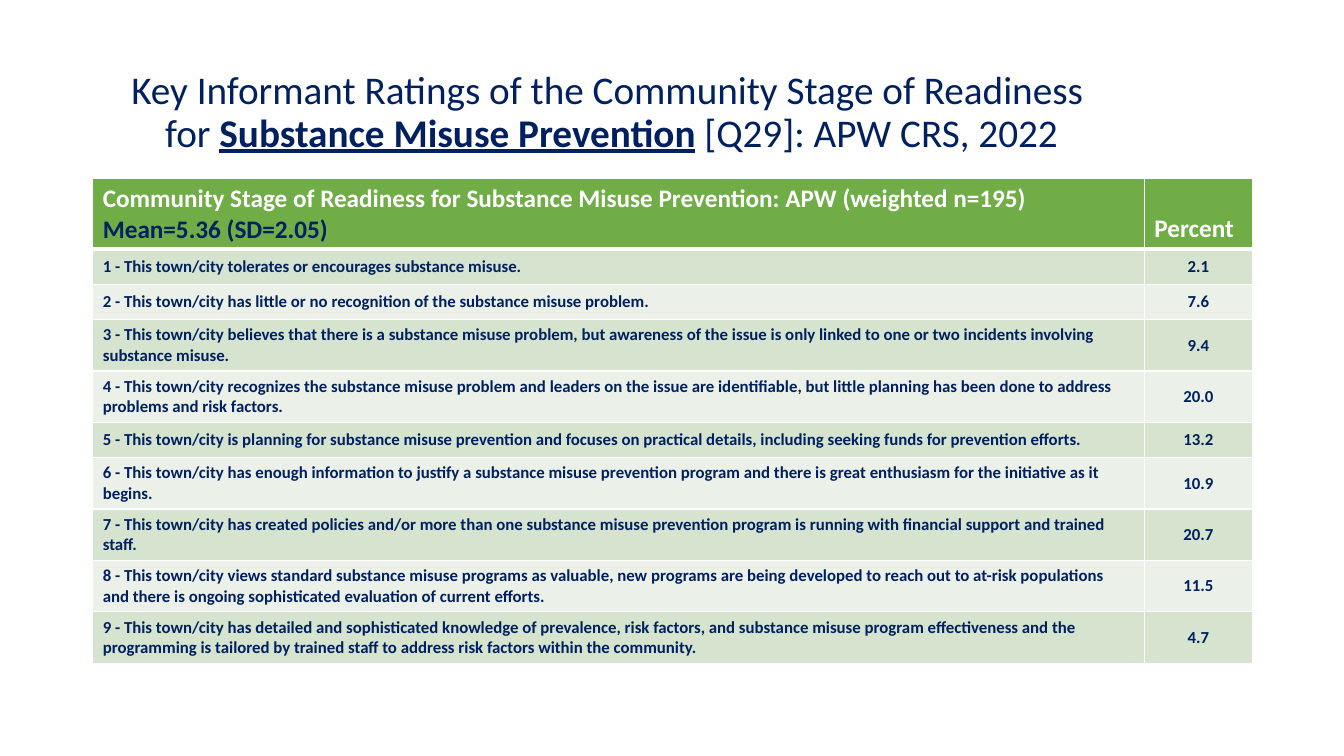
"""Build a slide tabulating community readiness ratings for substance misuse prevention."""
import pptx
import pptx.util
import pptx.dml.color
import pptx.enum.text
from lxml import etree
from pptx.util import Inches

COLORS = {"navy": "002060", "white": "FFFFFF", "header": "70AD47",
          "band_dark": "D5E3CF", "band_light": "EBF1E9"}
ALIGN = pptx.enum.text.PP_ALIGN
ANCHOR = pptx.enum.text.MSO_ANCHOR
DRAWING_NS = "http://schemas.openxmlformats.org/drawingml/2006/main"
HEADER_HEIGHT = 0.7
ROW_HEIGHTS = {1: 0.35, 2: 0.51}

# Each stage holds its wording, its percentage and its number of text lines.
STAGES = [
    ("This town/city tolerates or encourages substance misuse.", "2.1", 1),
    ("This town/city has little or no recognition of the substance misuse problem.", "7.6", 1),
    ("This town/city believes that there is a substance misuse problem, but awareness of the "
     "issue is only linked to one or two incidents involving substance misuse.", "9.4", 2),
    ("This town/city recognizes the substance misuse problem and leaders on the issue are "
     "identifiable, but little planning has been done to address problems and risk factors.",
     "20.0", 2),
    ("This town/city is planning for substance misuse prevention and focuses on practical "
     "details, including seeking funds for prevention efforts.", "13.2", 1),
    ("This town/city has enough information to justify a substance misuse prevention program "
     "and there is great enthusiasm for the initiative as it begins.", "10.9", 2),
    ("This town/city has created policies and/or more than one substance misuse prevention "
     "program is running with financial support and trained staff.", "20.7", 2),
    ("This town/city views standard substance misuse programs as valuable, new programs are "
     "being developed to reach out to at-risk populations and there is ongoing sophisticated "
     "evaluation of current efforts.", "11.5", 2),
    ("This town/city has detailed and sophisticated knowledge of prevalence, risk factors, and "
     "substance misuse program effectiveness and the programming is tailored by trained staff "
     "to address risk factors within the community.", "4.7", 2),
]


def add_text(paragraph, text, size=12, color="navy", bold=True, underline=False):
    """Append a formatted run to a paragraph."""
    run = paragraph.add_run()
    run.text = text
    run.font.name = "Calibri"
    run.font.size = pptx.util.Pt(size)
    run.font.bold = bold
    run.font.underline = underline
    run.font.color.rgb = pptx.dml.color.RGBColor.from_string(COLORS[color])


def style_cell(cell, fill, anchor, top=1, bottom=1):
    """Set the fill, anchor and white borders of a cell, with border widths in points."""
    cell.fill.solid()
    cell.fill.fore_color.rgb = pptx.dml.color.RGBColor.from_string(COLORS[fill])
    cell.vertical_anchor = anchor
    properties = cell._tc.get_or_add_tcPr()
    widths = {"lnL": 1, "lnR": 1, "lnT": top, "lnB": bottom}
    for position, (edge, width) in enumerate(widths.items()):
        border = etree.Element(f"{{{DRAWING_NS}}}{edge}", w=str(pptx.util.Pt(width)))
        solid = etree.SubElement(border, f"{{{DRAWING_NS}}}solidFill")
        etree.SubElement(solid, f"{{{DRAWING_NS}}}srgbClr", val=COLORS["white"])
        properties.insert(position, border)


def add_title(slide):
    """Add the two-line title."""
    box = slide.shapes.add_textbox(Inches(0.92), Inches(0.4), Inches(10.29), Inches(1.45))
    frame = box.text_frame
    frame.word_wrap = True
    frame.vertical_anchor = ANCHOR.MIDDLE
    title = frame.paragraphs[0]
    title.alignment = ALIGN.CENTER
    title.line_spacing = 0.9
    add_text(title, "Key Informant Ratings of the Community Stage of Readiness ",
             size=28, bold=False)
    title.add_line_break()
    add_text(title, "for ", size=28, bold=False)
    add_text(title, "Substance Misuse Prevention", size=28, underline=True)
    add_text(title, " [Q29]: APW CRS, 2022", size=28, bold=False)


def fill_header(stage_cell, percent_cell):
    """Write the two column headings."""
    for cell in (stage_cell, percent_cell):
        style_cell(cell, "header", ANCHOR.BOTTOM, bottom=3)
    add_text(stage_cell.text_frame.paragraphs[0],
             "Community Stage of Readiness for Substance Misuse Prevention: APW (weighted n=195)",
             size=18, color="white")
    add_text(stage_cell.text_frame.add_paragraph(), "Mean=5.36 (SD=2.05)", size=18)
    add_text(percent_cell.text_frame.paragraphs[0], "Percent", size=18, color="white")


def fill_stage(stage_cell, percent_cell, number, wording, percent):
    """Write one readiness stage and its percentage."""
    band = "band_dark" if number % 2 else "band_light"
    for cell in (stage_cell, percent_cell):
        style_cell(cell, band, ANCHOR.MIDDLE, top=3 if number == 1 else 1)
    add_text(stage_cell.text_frame.paragraphs[0], f"{number} - {wording}")
    percent_cell.margin_left = percent_cell.margin_right = Inches(0.05)
    percent_cell.margin_top = percent_cell.margin_bottom = Inches(0)
    percent_line = percent_cell.text_frame.paragraphs[0]
    percent_line.alignment = ALIGN.CENTER
    add_text(percent_line, percent)


def add_ratings_table(slide):
    """Add the table of stages and percentages."""
    heights = [HEADER_HEIGHT] + [ROW_HEIGHTS[lines] for _, _, lines in STAGES]
    ratings = slide.shapes.add_table(len(heights), 2, Inches(0.92), Inches(1.77),
                                     Inches(11.5), Inches(sum(heights))).table
    for column, width in zip(ratings.columns, (10.43, 1.07)):
        column.width = Inches(width)
    for row, height in zip(ratings.rows, heights):
        row.height = Inches(height)
    fill_header(ratings.cell(0, 0), ratings.cell(0, 1))
    for number, (wording, percent, _) in enumerate(STAGES, start=1):
        fill_stage(ratings.cell(number, 0), ratings.cell(number, 1), number, wording, percent)


def main():
    """Create and save the presentation."""
    presentation = pptx.Presentation()
    presentation.slide_width = Inches(13.33)
    presentation.slide_height = Inches(7.5)
    slide = presentation.slides.add_slide(presentation.slide_layouts[6])
    add_title(slide)
    add_ratings_table(slide)
    presentation.save("out.pptx")


if __name__ == "__main__":
    main()
